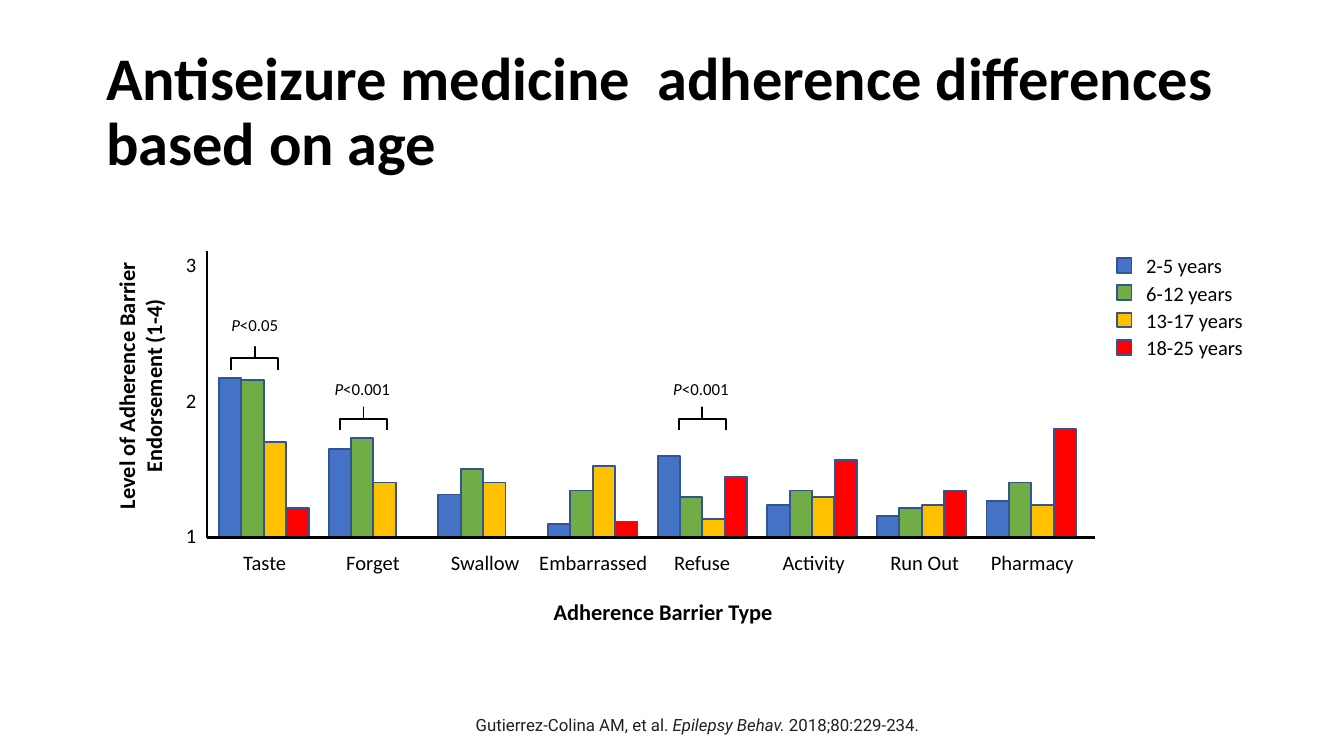
"""Build a slide with a grouped bar figure of adherence barriers by age."""
from lxml import etree
from pptx import Presentation
from pptx.dml.color import RGBColor
from pptx.enum.shapes import MSO_CONNECTOR as Connector, MSO_SHAPE as Shape
from pptx.enum.text import MSO_ANCHOR as Anchor, MSO_AUTO_SIZE as AutoSize, PP_ALIGN as Align
from pptx.oxml.ns import qn
from pptx.util import Inches, Pt

BLACK = RGBColor(0x00, 0x00, 0x00)
CITATION_GRAY = RGBColor(0x21, 0x21, 0x21)
BAR_OUTLINE = RGBColor(0x32, 0x54, 0x91)
BLUE = RGBColor(0x44, 0x72, 0xC4)
GREEN = RGBColor(0x70, 0xAD, 0x47)
AMBER = RGBColor(0xFF, 0xC0, 0x00)
RED = RGBColor(0xFF, 0x00, 0x00)

AXIS_LEFT, AXIS_RIGHT, AXIS_TOP, BASELINE = 1.54, 8.15, 1.87, 4.0
FIRST_BAR, LAST_GROUP, BAR_WIDTH = 1.63, 7.34, 0.5 / 3

age_groups = [
    ("2-5 years", BLUE, 0.78),
    ("6-12 years", GREEN, 0.86),
    ("13-17 years", AMBER, 0.93),
    ("18-25 years", RED, 0.93),
]
barriers = [
    ("Taste", 1.70, 0.54, [2.19, 2.17, 1.71, 1.22]),
    ("Forget", 2.47, 0.61, [1.66, 1.74, 1.41]),
    ("Swallow", 3.25, 0.72, [1.32, 1.51, 1.41]),
    ("Embarrassed", 3.91, 1.01, [1.10, 1.35, 1.53, 1.12]),
    ("Refuse", 4.91, 0.63, [1.61, 1.30, 1.14, 1.45]),
    ("Activity", 5.72, 0.67, [1.24, 1.35, 1.30, 1.58]),
    ("Run Out", 6.52, 0.72, [1.16, 1.22, 1.24, 1.35]),
    ("Pharmacy", 7.27, 0.82, [1.27, 1.41, 1.24, 1.81]),
]
significance = [
    ("<0.05", 1.62, 2.29, 0.55, 1.81, 2.49),
    ("<0.001", 2.39, 2.77, 0.61, 2.62, 2.94),
    ("<0.001", 4.91, 2.77, 0.61, 5.14, 2.94),
]

deck = Presentation()
deck.slide_width, deck.slide_height = Inches(10), Inches(10 * 9 / 16)
page = deck.slides.add_slide(deck.slide_layouts[5])


def add_rect(left, top, width, height, color):
    rect = page.shapes.add_shape(
        Shape.RECTANGLE, Inches(left), Inches(top), Inches(width), Inches(height))
    rect.shadow.inherit = False
    rect.fill.solid()
    rect.fill.fore_color.rgb = color
    rect.line.color.rgb = BAR_OUTLINE
    rect.line.width = Pt(1)


def add_label(runs, left, top, width, height, size=11, align=Align.CENTER,
              bold=False, wrap=False, font="Calibri", color=BLACK):
    box = page.shapes.add_textbox(Inches(left), Inches(top), Inches(width), Inches(height))
    box.text_frame.word_wrap = wrap
    box.text_frame.vertical_anchor = Anchor.MIDDLE
    para = box.text_frame.paragraphs[0]
    para.alignment = align
    for text, italic in runs:
        span = para.add_run()
        span.text = text
        span.font.name = font
        span.font.size = Pt(size)
        span.font.bold = bold
        span.font.italic = italic
        span.font.color.rgb = color
    return box


title = page.shapes.title
title.left, title.top = Inches(0.69), Inches(0.3)
title.width, title.height = Inches(8.62), Inches(1.09)
title.text_frame.word_wrap = True
title.text_frame.auto_size = AutoSize.NONE
title.text_frame.vertical_anchor = Anchor.MIDDLE
title_para = title.text_frame.paragraphs[0]
title_para.alignment = Align.LEFT
title_para.line_spacing = 0.9
title_span = title_para.add_run()
title_span.text = "Antiseizure medicine  adherence differences based on age"
title_span.font.name = "Calibri"
title_span.font.size = Pt(32.4)
title_span.font.bold = True
title_span.font.color.rgb = BLACK

group_step = (LAST_GROUP - FIRST_BAR) / (len(barriers) - 1)
for group, (name, label_left, label_width, levels) in enumerate(barriers):
    for bar, (level, (age, color, age_width)) in enumerate(zip(levels, age_groups)):
        bar_left = FIRST_BAR + group * group_step + bar * BAR_WIDTH
        add_rect(bar_left, BASELINE - (level - 1), BAR_WIDTH, level - 1, color)
    add_label([(name, False)], label_left, 4.04, label_width, 0.29)

for end_x, end_y in [(AXIS_LEFT, AXIS_TOP), (AXIS_RIGHT, BASELINE)]:
    axis = page.shapes.add_connector(
        Connector.STRAIGHT, Inches(AXIS_LEFT), Inches(BASELINE), Inches(end_x), Inches(end_y))
    axis.line.color.rgb = BLACK
    axis.line.width = Pt(1.5)
    etree.SubElement(axis._element.spPr, qn("a:effectLst"))

legend_step = (2.53 - 1.92) / (len(age_groups) - 1)
for row, (age, color, age_width) in enumerate(age_groups):
    add_rect(8.31, 1.92 + row * legend_step, 0.11, 0.11, color)
    add_label([(age, False)], 8.43, 1.83 + row * legend_step, age_width, 0.29, align=Align.LEFT)

for tick in range(1, 4):
    add_label([(str(tick), False)], 1.28, 4.85 - tick * 1.01, 0.28, 0.29, align=Align.RIGHT)

add_label([("Adherence Barrier Type", False)], 4.01, 4.4, 1.85, 0.3, size=12, bold=True)
level_title = add_label([("Level of Adherence Barrier Endorsement (1-4)", False)],
                        -0.01, 2.62, 2.1, 0.5, size=12, bold=True, wrap=True)
level_title.rotation = 270

for p_value, left, top, width, brace_left, brace_top in significance:
    add_label([("P", True), (p_value, False)], left, top, width, 0.25, size=9)
    brace = page.shapes.add_shape(
        Shape.RIGHT_BRACE, Inches(brace_left), Inches(brace_top), Inches(0.17), Inches(0.35))
    brace.adjustments[0] = 0
    brace.adjustments[1] = 0.5
    brace.rotation = 270
    brace.shadow.inherit = False
    brace.fill.background()
    brace.line.color.rgb = BLACK
    brace.line.width = Pt(1)

citation = add_label(
    [("Gutierrez-Colina AM, et al. ", False), ("Epilepsy Behav.", True),
     (" 2018;80:229-234.", False)],
    3.44, 4.96, 5.88, 0.56, size=9, align=Align.LEFT, wrap=True,
    font="Roboto", color=CITATION_GRAY)
citation.text_frame.vertical_anchor = Anchor.BOTTOM
citation.text_frame.paragraphs[0].line_spacing = 0.9

deck.save("out.pptx")
